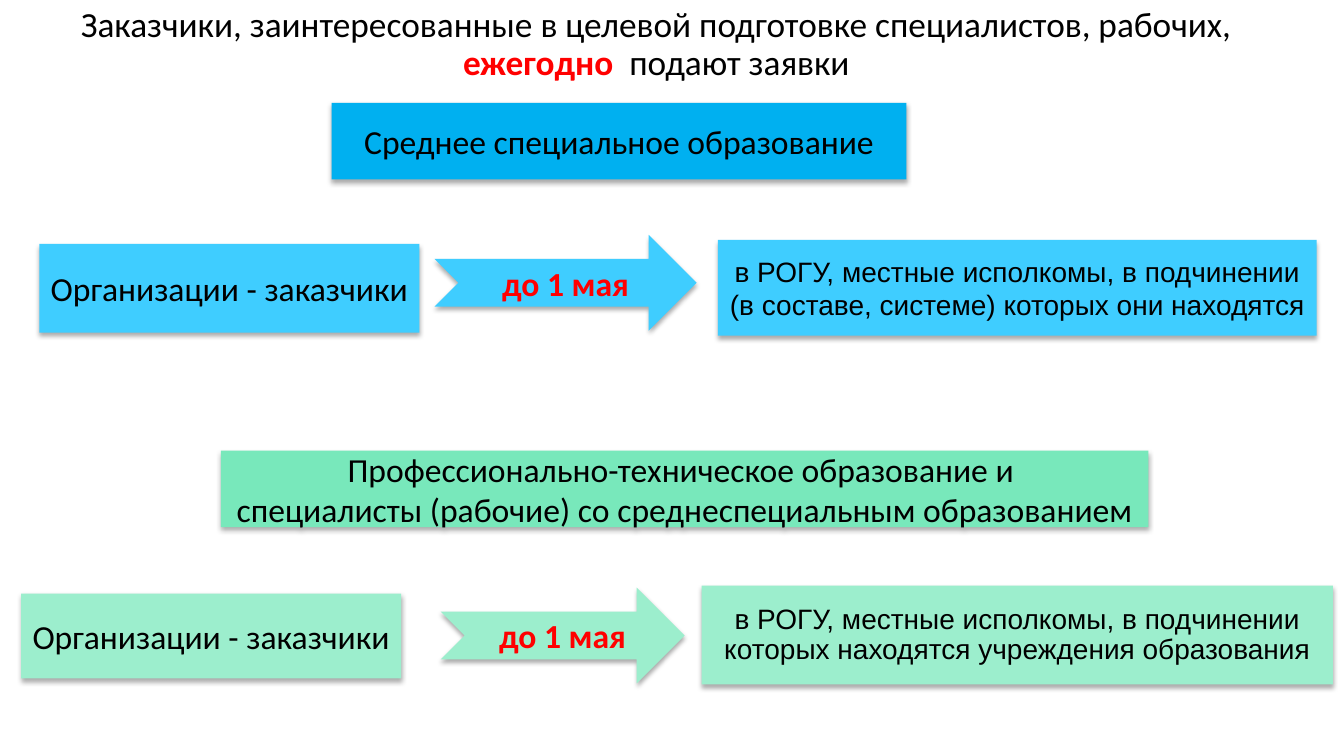
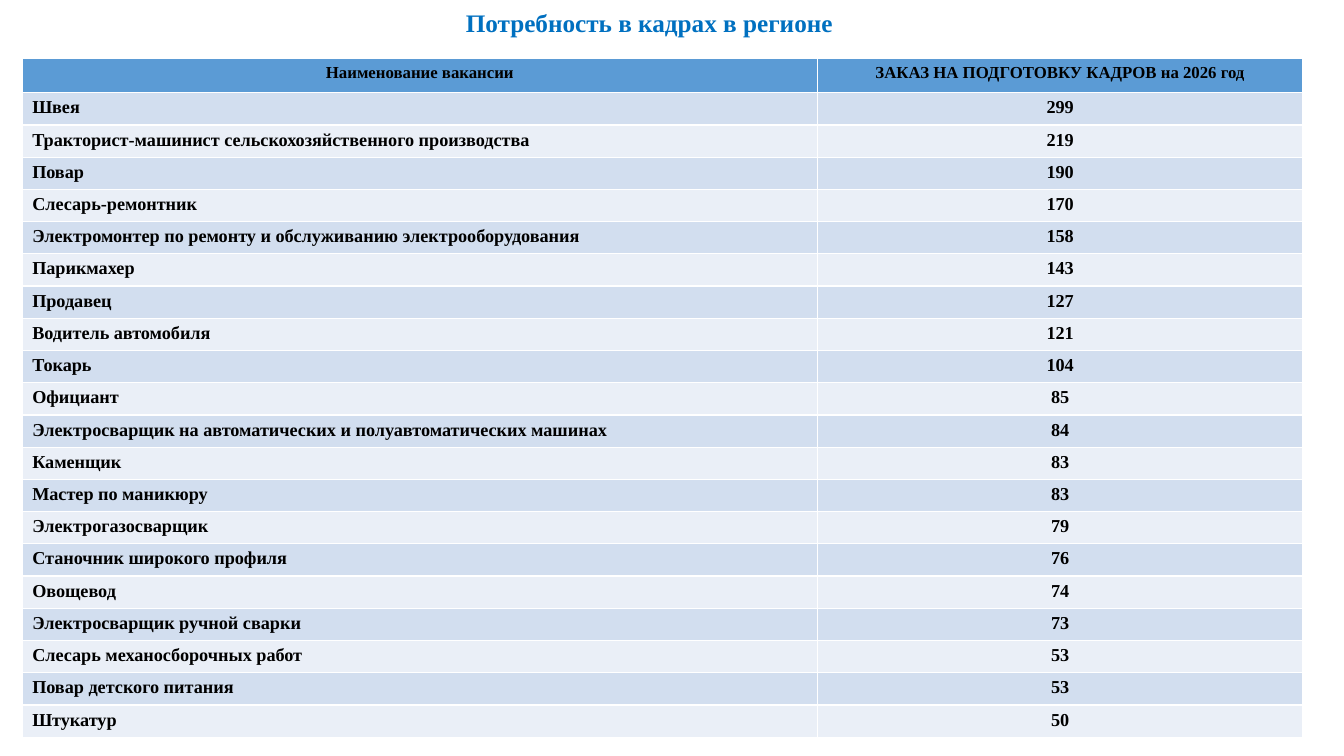
import dataclasses

import lxml.etree
import pptx
import pptx.dml.color
import pptx.enum.shapes
import pptx.enum.text
import pptx.oxml.ns
import pptx.util

Inches = pptx.util.Inches
SHAPE = pptx.enum.shapes.MSO_SHAPE
ALIGN = pptx.enum.text.PP_ALIGN
ANCHOR = pptx.enum.text.MSO_ANCHOR
TITLE_ONLY = 5


# Colours, fonts and type sizes
@dataclasses.dataclass(frozen=True)
class Theme:
    text: str = "000000"
    accent: str = "FF0000"
    heading: str = "0070C0"
    blue_banner: str = "00B0F0"
    blue_step: str = "3FCDFF"
    green_banner: str = "78E8BB"
    green_step: str = "9CEECD"
    table_header: str = "5B9BD5"
    table_bands: tuple = ("D2DEEF", "EAEFF7")
    sans: str = "Calibri"
    detail: str = "Arial"
    serif: str = "Times New Roman"
    lead_size: float = 25.2
    step_size: float = 24
    detail_size: float = 20
    heading_size: float = 18
    row_size: float = 13
    header_size: float = 12


THEME = Theme()

# Each section: banner, then customer -> deadline -> recipient
SECTIONS = [
    {
        "banner": ("Среднее специальное образование", (3.29, 1.02, 5.7, 0.76)),
        "customer": (0.39, 2.42, 3.77, 0.88),
        "deadline": (4.31, 2.33, 2.6, 0.95),
        "recipient": ("в РОГУ, местные исполкомы, в подчинении "
                      "(в составе, системе) которых они находятся",
                      (7.12, 2.38, 5.94, 0.95)),
        "recipient_spacing": 1.0,
        "fills": (THEME.blue_banner, THEME.blue_step),
    },
    {
        "banner": ("Профессионально-техническое образование и \v"
                   "специалисты (рабочие) со среднеспециальным образованием",
                   (2.19, 4.47, 9.2, 0.76)),
        "customer": (0.21, 5.89, 3.77, 0.84),
        "deadline": (4.37, 5.83, 2.42, 0.95),
        "recipient": ("в РОГУ, местные исполкомы, в подчинении "
                      "которых находятся учреждения образования",
                      (6.96, 5.81, 6.26, 0.98)),
        "recipient_spacing": 0.9,
        "fills": (THEME.green_banner, THEME.green_step),
    },
]

VACANCY_HEADER = ("Наименование вакансии", "ЗАКАЗ НА ПОДГОТОВКУ КАДРОВ на 2026 год")
VACANCIES = [
    ("Швея", 299),
    ("Тракторист-машинист сельскохозяйственного производства", 219),
    ("Повар", 190),
    ("Слесарь-ремонтник", 170),
    ("Электромонтер по ремонту и обслуживанию электрооборудования", 158),
    ("Парикмахер", 143),
    ("Продавец", 127),
    ("Водитель автомобиля", 121),
    ("Токарь", 104),
    ("Официант", 85),
    ("Электросварщик на автоматических и полуавтоматических машинах", 84),
    ("Каменщик", 83),
    ("Мастер по маникюру", 83),
    ("Электрогазосварщик", 79),
    ("Станочник широкого профиля", 76),
    ("Овощевод", 74),
    ("Электросварщик ручной сварки", 73),
    ("Слесарь механосборочных работ", 53),
    ("Повар детского питания", 53),
    ("Штукатур", 50),
]


def rgb(value):
    return pptx.dml.color.RGBColor.from_string(value)


def set_font(font, name, size, color=THEME.text, bold=False):
    font.name = name
    font.size = pptx.util.Pt(size)
    font.color.rgb = rgb(color)
    font.bold = bold


def fill_solid(part, color):
    part.fill.solid()
    part.fill.fore_color.rgb = rgb(color)


def add_soft_shadow(shape):
    shape.shadow.inherit = False
    qn = pptx.oxml.ns.qn
    effects = shape._element.spPr.find(qn("a:effectLst"))
    shadow = lxml.etree.SubElement(
        effects, qn("a:outerShdw"), blurRad=str(pptx.util.Pt(3.5)),
        dist=str(pptx.util.Pt(2.2)), dir="5400000", rotWithShape="0")
    color = lxml.etree.SubElement(shadow, qn("a:srgbClr"), val="000000")
    lxml.etree.SubElement(color, qn("a:alpha"), val="32000")


def place_title(slide, box, anchor, align):
    title = slide.shapes.title
    title.left, title.top, title.width, title.height = map(Inches, box)
    frame = title.text_frame
    frame.word_wrap = True
    frame.auto_size = pptx.enum.text.MSO_AUTO_SIZE.NONE
    frame.vertical_anchor = anchor
    paragraph = frame.paragraphs[0]
    paragraph.alignment = align
    return paragraph


def add_block(slide, kind, box, text, fill, name=THEME.sans,
              size=THEME.step_size, color=THEME.text, bold=False, spacing=1.0):
    block = slide.shapes.add_shape(kind, *map(Inches, box))
    fill_solid(block, fill)
    block.line.fill.background()
    add_soft_shadow(block)
    frame = block.text_frame
    frame.word_wrap = True
    frame.vertical_anchor = ANCHOR.MIDDLE
    frame.text = text
    paragraph = frame.paragraphs[0]
    paragraph.alignment = ALIGN.CENTER
    paragraph.line_spacing = spacing
    set_font(paragraph.font, name, size, color, bold)


def add_section(slide, section):
    banner_fill, step_fill = section["fills"]
    banner_text, banner_box = section["banner"]
    recipient_text, recipient_box = section["recipient"]
    add_block(slide, SHAPE.RECTANGLE, banner_box, banner_text, banner_fill)
    add_block(slide, SHAPE.RECTANGLE, section["customer"],
              "Организации - заказчики", step_fill)
    add_block(slide, SHAPE.NOTCHED_RIGHT_ARROW, section["deadline"],
              "до 1 мая", step_fill, color=THEME.accent, bold=True)
    add_block(slide, SHAPE.RECTANGLE, recipient_box, recipient_text, step_fill,
              THEME.detail, THEME.detail_size,
              spacing=section["recipient_spacing"])


def fill_cell(cell, text, fill, size, align):
    fill_solid(cell, fill)
    cell.text = str(text)
    paragraph = cell.text_frame.paragraphs[0]
    paragraph.alignment = align
    set_font(paragraph.font, THEME.serif, size, bold=True)


def add_vacancy_table(slide):
    column_widths = (7.89, 4.81)
    header_height, row_height = 0.34, 0.32
    table = slide.shapes.add_table(
        len(VACANCIES) + 1, len(column_widths), Inches(0.22), Inches(0.58),
        Inches(sum(column_widths)),
        Inches(header_height + row_height * len(VACANCIES))).table
    for column, width in zip(table.columns, column_widths):
        column.width = Inches(width)
    for index, values in enumerate([VACANCY_HEADER, *VACANCIES]):
        header = index == 0
        table.rows[index].height = Inches(header_height if header else row_height)
        fill = THEME.table_header if header else THEME.table_bands[(index - 1) % 2]
        size = THEME.header_size if header else THEME.row_size
        aligns = (ALIGN.CENTER if header else ALIGN.LEFT, ALIGN.CENTER)
        for cell, value, align in zip(table.rows[index].cells, values, aligns):
            fill_cell(cell, value, fill, size, align)


# Slide 1: who applies, where and by when
def build_applications_slide(prs):
    slide = prs.slides.add_slide(prs.slide_layouts[TITLE_ONLY])
    lead = place_title(slide, (0.12, 0.07, 12.78, 0.76), ANCHOR.MIDDLE, ALIGN.CENTER)
    lead.line_spacing = 0.9
    for text, color, bold in (
            ("Заказчики, заинтересованные в целевой подготовке специалистов, рабочих, ",
             THEME.text, False),
            ("ежегодно", THEME.accent, True),
            ("  подают заявки", THEME.text, False)):
        run = lead.add_run()
        run.text = text
        set_font(run.font, THEME.sans, THEME.lead_size, color, bold)
    for section in SECTIONS:
        add_section(slide, section)


# Slide 2: staffing needs by vacancy
def build_vacancies_slide(prs):
    slide = prs.slides.add_slide(prs.slide_layouts[TITLE_ONLY])
    heading = place_title(slide, (4.52, 0, 7.38, 0.41), ANCHOR.TOP, ALIGN.LEFT)
    heading.text = "Потребность в кадрах в регионе"
    heading.line_spacing = 1.07
    set_font(heading.font, THEME.serif, THEME.heading_size, THEME.heading, True)
    add_vacancy_table(slide)


def main():
    prs = pptx.Presentation()
    prs.slide_width, prs.slide_height = Inches(13.33), Inches(7.5)
    build_applications_slide(prs)
    build_vacancies_slide(prs)
    prs.save("out.pptx")


if __name__ == "__main__":
    main()
